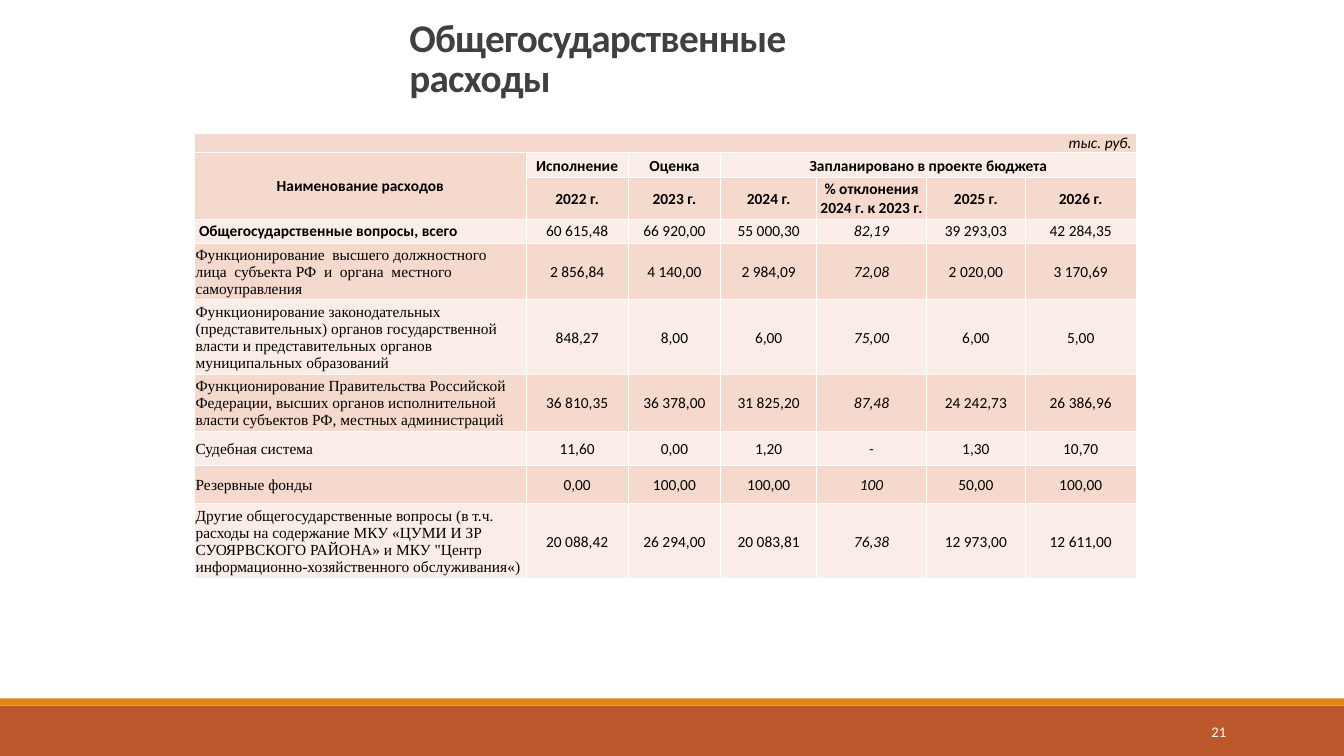
from lxml import etree
from pptx import Presentation
from pptx.dml.color import RGBColor
from pptx.enum.shapes import MSO_SHAPE as Shape
from pptx.enum.text import MSO_ANCHOR as Anchor, MSO_AUTO_SIZE as AutoSize, PP_ALIGN as Align
from pptx.oxml import parse_xml
from pptx.oxml.ns import nsdecls, qn
from pptx.util import Inches, Pt

DARK_BAND, LIGHT_BAND = "F5D9CC", "FAEDE7"
COLUMN_WIDTHS = [3.29, 1.01, 0.92, 0.95, 1.09, 0.98, 1.1]
ROW_HEIGHTS = [0.16, 0.25, 0.41, 0.24, 0.4, 0.4, 0.42, 0.34, 0.38, 0.44]
HEADER_ROWS = 3
PERCENT_COLUMN = 4
MERGES = [((0, 0), (0, 6)), ((1, 0), (2, 0)), ((1, 3), (1, 6))]

ROWS = [
    ["тыс. руб. ", "", "", "", "", "", ""],
    ["Наименование расходов", "Исполнение", "Оценка", "Запланировано в проекте бюджета", "", "", ""],
    ["", "2022 г.", "2023 г.", "2024 г.", "% отклонения 2024 г. к 2023 г.", "2025 г.", "2026 г."],
    [" Общегосударственные вопросы, всего",
     "60 615,48", "66 920,00", "55 000,30", "82,19", "39 293,03", "42 284,35"],
    ["Функционирование  высшего должностного  лица  субъекта РФ  и  органа  местного  самоуправления",
     "2 856,84", "4 140,00", "2 984,09", "72,08", "2 020,00", "3 170,69"],
    ["Функционирование законодательных (представительных) органов государственной власти "
     "и представительных органов муниципальных образований",
     "848,27", "8,00", "6,00", "75,00", "6,00", "5,00"],
    ["Функционирование Правительства Российской Федерации, высших органов исполнительной "
     "власти субъектов РФ, местных администраций",
     "36 810,35", "36 378,00", "31 825,20", "87,48", "24 242,73", "26 386,96"],
    ["Судебная система", "11,60", "0,00", "1,20", "-", "1,30", "10,70"],
    ["Резервные фонды", "0,00", "100,00", "100,00", "100", "50,00", "100,00"],
    ["Другие общегосударственные вопросы (в т.ч. расходы на содержание МКУ «ЦУМИ И ЗР "
     "СУОЯРВСКОГО РАЙОНА» и МКУ \"Центр  информационно-хозяйственного обслуживания«)",
     "20 088,42", "26 294,00", "20 083,81", "76,38", "12 973,00", "12 611,00"],
]


def color(value):
    return RGBColor.from_string(value)


class SlideBuilder:
    font = "Calibri"

    def __init__(self, presentation):
        self.slide = presentation.slides.add_slide(presentation.slide_layouts[5])

    def run(self, paragraph, text, size, ink="000000", bold=False, italic=False, font=None):
        run = paragraph.add_run()
        run.text = text
        run.font.name = font or self.font
        run.font.size = Pt(size)
        run.font.bold = bold
        run.font.italic = italic
        run.font.color.rgb = color(ink)
        return run

    def title(self, box, text):
        title = self.slide.shapes.title
        title.left, title.top, title.width, title.height = map(Inches, box)
        frame = title.text_frame
        frame.word_wrap = True
        frame.auto_size = AutoSize.NONE
        frame.vertical_anchor = Anchor.BOTTOM
        paragraph = frame.paragraphs[0]
        paragraph.alignment = Align.LEFT
        paragraph.line_spacing = 0.85
        run = self.run(paragraph, text, 28, "404040", bold=True)
        run.font._element.set("spc", "-50")

    def band(self, box, fill):
        shape = self.slide.shapes.add_shape(Shape.RECTANGLE, *map(Inches, box))
        shape.shadow.inherit = False
        shape.fill.solid()
        shape.fill.fore_color.rgb = color(fill)
        shape.line.fill.background()

    def page_number(self, box, text):
        frame = self.slide.shapes.add_textbox(*map(Inches, box)).text_frame
        frame.word_wrap = True
        frame.vertical_anchor = Anchor.MIDDLE
        frame.paragraphs[0].alignment = Align.RIGHT
        self.run(frame.paragraphs[0], text, 10.5, "FFFFFF")

    def cell_format(self, cell, fill):
        cell.margin_left = cell.margin_right = cell.margin_top = Inches(0.01)
        cell.margin_bottom = 0
        cell.vertical_anchor = Anchor.MIDDLE
        cell.fill.solid()
        cell.fill.fore_color.rgb = color(fill)
        properties = cell._tc.get_or_add_tcPr()
        for index, side in enumerate(("lnL", "lnR", "lnT", "lnB")):
            properties.insert(index, parse_xml(
                f'<a:{side} {nsdecls("a")} w="{Pt(1)}"><a:solidFill>'
                f'<a:srgbClr val="FFFFFF"/></a:solidFill></a:{side}>'))

    def cell_text(self, cell, text, row, column):
        paragraph = cell.text_frame.paragraphs[0]
        if not text:  # keeps merged cells from stretching their row
            etree.SubElement(paragraph._p, qn("a:endParaRPr"), sz="1100")
            return
        is_name = column == 0 and row >= HEADER_ROWS
        if row == 0:
            cell.vertical_anchor = Anchor.BOTTOM
            paragraph.alignment = Align.RIGHT
        else:
            paragraph.alignment = Align.LEFT if is_name else Align.CENTER
        self.run(
            paragraph, text, 11,
            bold=0 < row < HEADER_ROWS or (row == HEADER_ROWS and column == 0),
            italic=row == 0 or (row >= HEADER_ROWS and column == PERCENT_COLUMN),
            font="Times New Roman" if is_name and row > HEADER_ROWS else None)

    def table(self, left, top):
        table = self.slide.shapes.add_table(
            len(ROWS), len(COLUMN_WIDTHS), Inches(left), Inches(top),
            Inches(sum(COLUMN_WIDTHS)), Inches(sum(ROW_HEIGHTS))).table
        for column, width in zip(table.columns, COLUMN_WIDTHS):
            column.width = Inches(width)
        for row, height in zip(table.rows, ROW_HEIGHTS):
            row.height = Inches(height)
        for row, texts in enumerate(ROWS):
            for column, text in enumerate(texts):
                is_dark = row % 2 == 0 or (row, column) == (1, 0)
                cell = table.cell(row, column)
                self.cell_format(cell, DARK_BAND if is_dark else LIGHT_BAND)
                self.cell_text(cell, text, row, column)
        for first, last in MERGES:
            table.cell(*first).merge(table.cell(*last))


def main():
    presentation = Presentation()
    presentation.slide_width = Inches(13.33)
    presentation.slide_height = Inches(7.5)
    builder = SlideBuilder(presentation)

    # Footer bands and page number
    builder.band((0, 7, 13.33, 0.5), "BD582C")
    builder.band((0, 6.93, 13.33, 0.07), "E48312")
    builder.page_number((10.83, 7.06, 1.43, 0.4), "21")

    # Title and expenditure table
    builder.title((3.96, 0.52, 5.3, 0.53), "Общегосударственные расходы")
    builder.table(1.93, 1.32)

    presentation.save("out.pptx")


if __name__ == "__main__":
    main()
